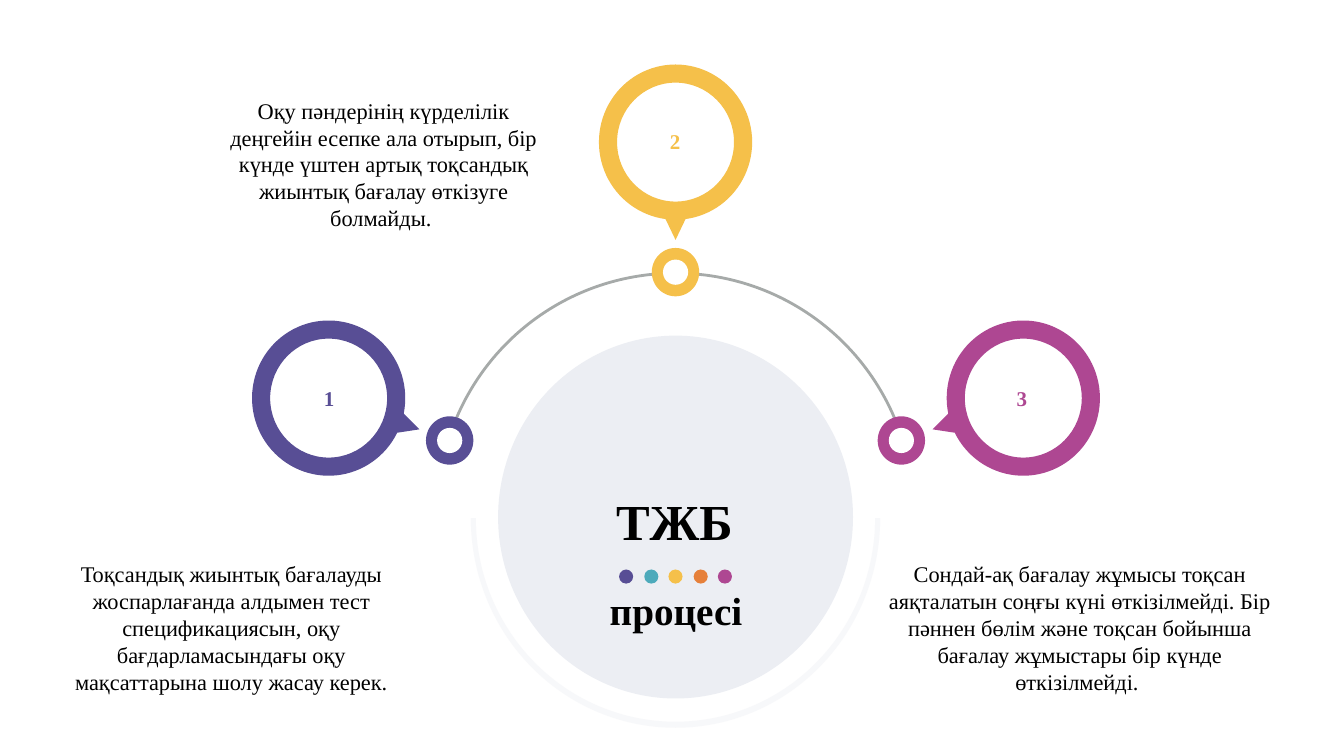
from math import atan2, cos, degrees, radians, sin, tan

from lxml import etree
from pptx import Presentation
from pptx.dml.color import RGBColor
from pptx.enum.shapes import MSO_SHAPE
from pptx.enum.text import MSO_ANCHOR, MSO_AUTO_SIZE, PP_ALIGN
from pptx.oxml.ns import qn
from pptx.util import Pt

OVAL = MSO_SHAPE.OVAL
TOP, MIDDLE = MSO_ANCHOR.TOP, MSO_ANCHOR.MIDDLE
FIXED, GROW = MSO_AUTO_SIZE.NONE, MSO_AUTO_SIZE.SHAPE_TO_FIT_TEXT
CENTER = PP_ALIGN.CENTER
FONT = "Times New Roman"
PX = 9144
INDIGO, TEAL, GOLD = "584E95", "4DAABB", "F5C04A"
ORANGE, PLUM = "E6803A", "AE4792"
PALE, GREY, WHITE, BLACK = "ECEEF3", "A6AAA9", "FFFFFF", "000000"

KNOTS = [(670, 270, GOLD), (894, 437, PLUM), (446, 437, INDIGO)]
PINS = [
    (670, 141, (670, 238), GOLD),
    (326, 395, (416, 426), INDIGO),
    (1015, 395, (925, 426), PLUM),
]
NOTES = [
    ("Сондай-ақ бағалау жұмысы тоқсан аяқталатын соңғы күні "
     "өткізілмейді. Бір пәннен бөлім және тоқсан бойынша бағалау "
     "жұмыстары бір күнде өткізілмейді. ", 871, 554, 400),
    ("Тоқсандық жиынтық бағалауды жоспарлағанда алдымен тест "
     "спецификациясын, оқу бағдарламасындағы оқу мақсаттарына шолу "
     "жасау керек.", 68, 554, 323),
    ("Оқу пәндерінің күрделілік деңгейін есепке ала отырып, бір күнде "
     "үштен артық тоқсандық жиынтық бағалау өткізуге болмайды. ",
     219, 94, 323),
]
DIGITS = [("1", 256, 377, INDIGO), ("3", 943, 377, PLUM),
          ("2", 599, 122, GOLD)]


def emu(px):
    """Turn px into EMU."""
    return round(px * PX)


def color(code):
    """Turn a hex string into a colour."""
    return RGBColor.from_string(code)


def paint(shape, fill=None, line=None, width=2, alpha=None):
    """Set the fill and line of a shape and drop its shadow."""
    shape.shadow.inherit = False
    if fill:
        shape.fill.solid()
        shape.fill.fore_color.rgb = color(fill)
    else:
        shape.fill.background()
    if line:
        shape.line.color.rgb = color(line)
        shape.line.width = Pt(width)
    else:
        shape.line.fill.background()
    if alpha:
        tint = shape.fill._xPr.find(".//" + qn("a:srgbClr"))
        etree.SubElement(tint, qn("a:alpha")).set("val", str(alpha * 1000))


def oval(slide, cx, cy, width, height, fill):
    """Draw an oval around its centre."""
    box = (cx - width / 2, cy - height / 2, width, height)
    paint(slide.shapes.add_shape(OVAL, *map(emu, box)), fill)


def arc(cx, cy, rx, ry, start, end, parts, first="lnTo"):
    """List the path steps of an arc, with angles in degrees."""
    step = radians(end - start) / parts
    pull = 4 / 3 * tan(step / 4)

    def spot(turn, bend=0):
        """Find a point on the arc, or a handle along its tangent."""
        return (cx + rx * (cos(turn) - bend * sin(turn)),
                cy + ry * (sin(turn) + bend * cos(turn)))

    turn = radians(start)
    steps = [(first, [spot(turn)])]
    for _ in range(parts):
        after = turn + step
        steps.append(("cubicBezTo", [spot(turn, pull), spot(after, -pull),
                                     spot(after)]))
        turn = after
    return steps


def outline(slide, box, steps, **style):
    """Draw a freeform with curves inside a box."""
    left, top, right, low = box
    pen = slide.shapes.build_freeform(emu(left), emu(top))
    pen.add_line_segments([(emu(right), emu(low))], close=False)
    shape = pen.convert_to_shape()
    track = shape._element.find(".//" + qn("a:path"))
    for node in list(track):
        track.remove(node)
    for kind, spots in steps:
        node = etree.SubElement(track, qn("a:" + kind))
        for x, y in spots:
            dot = etree.SubElement(node, qn("a:pt"))
            dot.set("x", str(emu(x - left)))
            dot.set("y", str(emu(y - top)))
    paint(shape, **style)


def pin(slide, cx, cy, tip, fill):
    """Draw a ring with a pointed tip."""
    rx, ry, gap = 76, 77, 7.5
    angle = degrees(atan2(tip[1] - cy, tip[0] - cx))
    rim = arc(cx, cy, rx, ry, angle + gap, angle + 360 - gap, 6, "moveTo")
    hole = arc(cx, cy, 58, 59, 270, -90, 4, "moveTo")
    box = (min(cx - rx, tip[0]), cy - ry,
           max(cx + rx, tip[0]), max(cy + ry, tip[1]))
    end = [("close", [])]
    outline(slide, box, rim + [("lnTo", [tip])] + end + hole + end, fill=fill)


def label(slide, text, x, y, width, height, size=16, ink=BLACK, bold=False,
          anchor=TOP, fit=GROW):
    """Add a centred text box."""
    box = slide.shapes.add_textbox(*map(emu, (x, y, width, height)))
    frame = box.text_frame
    frame.word_wrap = True
    frame.auto_size = fit
    frame.vertical_anchor = anchor
    frame.margin_left = frame.margin_right = emu(2)
    frame.margin_top = frame.margin_bottom = emu(2)
    para = frame.paragraphs[0]
    para.alignment = CENTER
    run = para.add_run()
    run.text = text
    run.font.name = FONT
    run.font.size = Pt(size)
    run.font.bold = bold
    run.font.color.rgb = color(ink)


def main():
    """Build the slide and save it."""
    deck = Presentation()
    deck.slide_width, deck.slide_height = emu(1333), emu(750)
    slide = deck.slides.add_slide(deck.slide_layouts[6])

    outline(slide, (450, 271, 890, 422),
            arc(670, 507, 236, 236, 201, 339, 3, "moveTo"), line=GREY)
    for cx, cy, hue in KNOTS:
        oval(slide, cx, cy, 47, 48, hue)
        oval(slide, cx, cy, 25, 25, WHITE)

    oval(slide, 670, 513, 352, 360, PALE)
    bowl = (arc(670, 514, 203, 208, 180, 0, 3, "moveTo")
            + arc(670, 514, 198, 202, 0, 180, 3) + [("close", [])])
    outline(slide, (467, 514, 873, 722), bowl, fill=PALE, alpha=40)

    for spot in PINS:
        pin(slide, *spot)
    for text, x, y, width in NOTES:
        label(slide, text, x, y, width, 149)
    for digit, x, y, hue in DIGITS:
        label(slide, digit, x, y, 141, 36, size=15, ink=hue, bold=True,
              anchor=MIDDLE)

    label(slide, "ТЖБ", 536, 484, 266, 63, size=36, bold=True, fit=FIXED)
    label(slide, "процесі", 512, 580, 317, 63, size=28, bold=True, fit=FIXED)
    for i, hue in enumerate([INDIGO, TEAL, GOLD, ORANGE, PLUM]):
        oval(slide, 621 + (49 * i + 1) // 2, 572, 14, 14, hue)

    deck.save("out.pptx")


if __name__ == "__main__":
    main()
